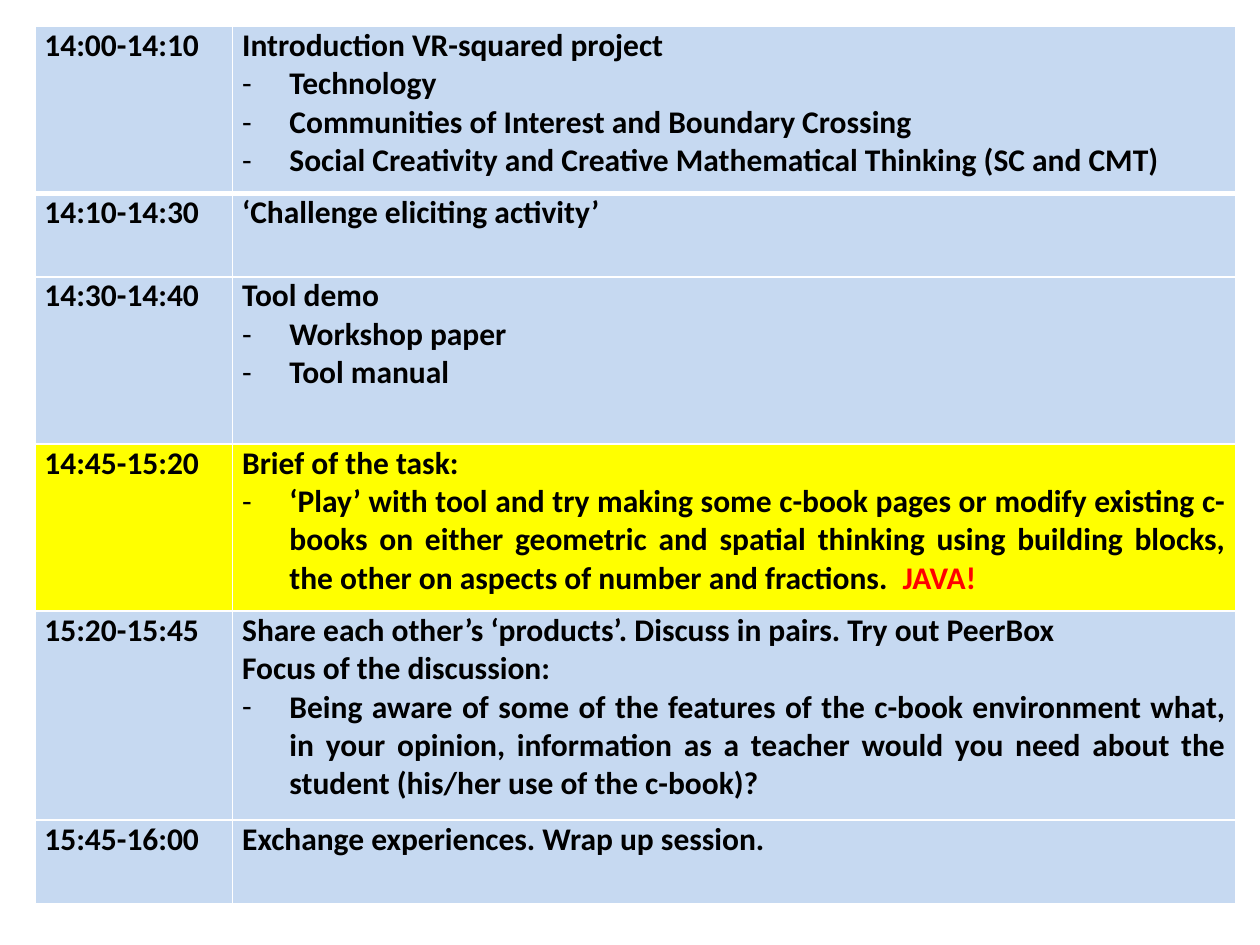
from lxml import etree
from pptx import Presentation
from pptx.dml.color import RGBColor
from pptx.enum import text
from pptx.oxml import ns
from pptx.util import Pt

BLUE = RGBColor(0xC6, 0xD9, 0xF1)
YELLOW = RGBColor(0xFF, 0xFF, 0x00)
BLACK = RGBColor(0x00, 0x00, 0x00)
RED = RGBColor(0xFF, 0x00, 0x00)
WHITE = RGBColor(0xFF, 0xFF, 0xFF)

FONT = "Calibri"
FONT_SIZE = Pt(18)
INDENT = Pt(27)
LINE_HEIGHT = 23.88
TIME_WIDTH = 113
BULLET = "- "
WARNING = "JAVA!"

# Time, height in lines, fill, paragraphs
SESSIONS = [
    ("14:00-14:10", 4, BLUE, [
        "Introduction VR-squared project",
        "- Technology",
        "- Communities of Interest and Boundary Crossing",
        "- Social Creativity and Creative Mathematical Thinking (SC and CMT)",
    ]),
    ("14:10-14:30", 2, BLUE, ["‘Challenge eliciting activity’"]),
    ("14:30-14:40", 4, BLUE, ["Tool demo", "- Workshop paper", "- Tool manual"]),
    ("14:45-15:20", 4, YELLOW, [
        "Brief of the task:",
        "- ‘Play’ with tool and try making some c-book pages or modify existing "
        "c-books on either geometric and spatial thinking using building blocks, "
        "the other on aspects of number and fractions.  " + WARNING,
    ]),
    ("15:20-15:45", 5, BLUE, [
        "Share each other’s ‘products’. Discuss in pairs. Try out PeerBox",
        "Focus of the discussion:",
        "- Being aware of some of the features of the c-book environment what, "
        "in your opinion, information as a teacher would you need about the "
        "student (his/her use of the c-book)?",
    ]),
    ("15:45-16:00", 2, BLUE, ["Exchange experiences. Wrap up session."]),
]


def add_run(paragraph, content, color=BLACK):
    run = paragraph.add_run()
    run.text = content
    run.font.name = FONT
    run.font.size = FONT_SIZE
    run.font.bold = True
    run.font.color.rgb = color


def write_paragraph(paragraph, content):
    """Write one justified paragraph, with a dash bullet if it starts with one."""
    paragraph.alignment = text.PP_ALIGN.JUSTIFY
    if content.startswith(BULLET):
        content = content.removeprefix(BULLET)
        properties = paragraph._p.get_or_add_pPr()
        properties.set("marL", str(INDENT))
        properties.set("indent", str(-INDENT))
        etree.SubElement(properties, ns.qn("a:buFont"), typeface=FONT)
        etree.SubElement(properties, ns.qn("a:buChar"), char=BULLET.strip())
    add_run(paragraph, content.removesuffix(WARNING))
    if content.endswith(WARNING):
        add_run(paragraph, WARNING, RED)


def set_borders(cell, top, bottom):
    """Draw white borders; top and bottom are line widths in points."""
    properties = cell._tc.get_or_add_tcPr()
    for side, width in (("L", 1), ("R", 1), ("T", top), ("B", bottom)):
        line = etree.SubElement(properties, ns.qn(f"a:ln{side}"), w=str(Pt(width)))
        fill = etree.SubElement(line, ns.qn("a:solidFill"))
        etree.SubElement(fill, ns.qn("a:srgbClr"), val=str(WHITE))


def fill_cell(cell, paragraphs, color, top, bottom):
    cell.margin_left = cell.margin_right = Pt(5.4)
    cell.margin_top = cell.margin_bottom = 0
    set_borders(cell, top, bottom)
    cell.fill.solid()
    cell.fill.fore_color.rgb = color
    frame = cell.text_frame
    for index, content in enumerate(paragraphs):
        paragraph = frame.add_paragraph() if index else frame.paragraphs[0]
        write_paragraph(paragraph, content)


def add_schedule(slide, left, top, width):
    height = LINE_HEIGHT * sum(lines for _, lines, _, _ in SESSIONS)
    table = slide.shapes.add_table(
        len(SESSIONS), 2, Pt(left), Pt(top), Pt(width), Pt(height)).table
    table.columns[0].width = Pt(TIME_WIDTH)
    table.columns[1].width = Pt(width - TIME_WIDTH)
    for index, (time, lines, color, paragraphs) in enumerate(SESSIONS):
        row = table.rows[index]
        row.height = Pt(lines * LINE_HEIGHT)
        # A thick rule separates the introduction from the other sessions
        above = 3 if index == 1 else 1
        below = 3 if index == 0 else 1
        fill_cell(row.cells[0], [time], color, above, below)
        fill_cell(row.cells[1], paragraphs, color, above, below)


def main():
    presentation = Presentation()
    presentation.slide_width = Pt(720)
    presentation.slide_height = Pt(540)
    slide = presentation.slides.add_slide(presentation.slide_layouts[6])
    add_schedule(slide, left=20, top=15, width=686)
    presentation.save("out.pptx")


if __name__ == "__main__":
    main()
